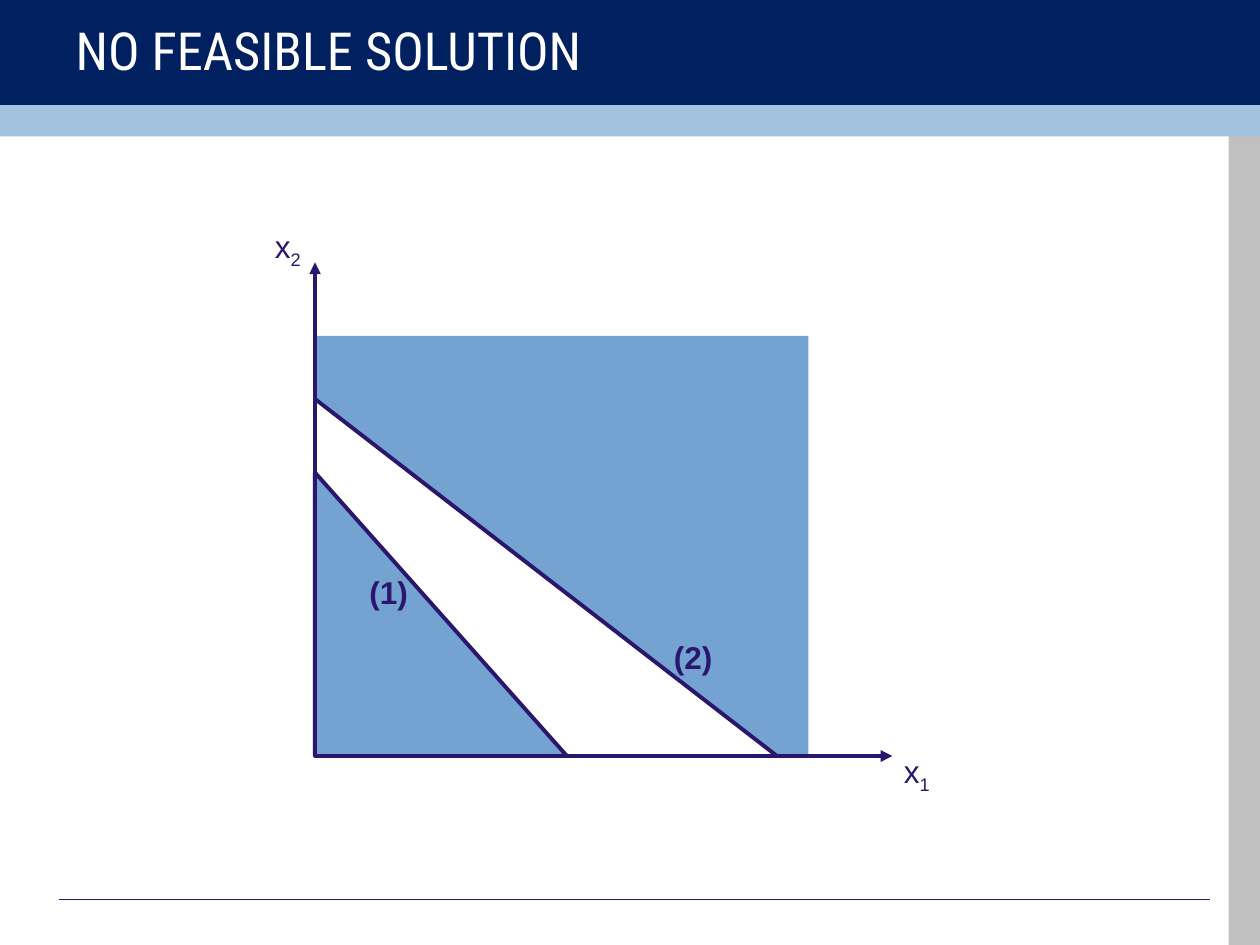
from dataclasses import dataclass

import lxml.etree
import pptx
import pptx.dml.color
import pptx.enum.shapes
import pptx.enum.text
import pptx.oxml.ns
import pptx.util

SHAPE = pptx.enum.shapes.MSO_SHAPE
COLS, ROWS = 120, 90  # slide grid, twelve units to the inch
INK, REGION, WHITE = "2B166E", "75A3D1", "FFFFFF"

prs = pptx.Presentation()
prs.slide_width = pptx.util.Inches(10)
prs.slide_height = pptx.util.Inches(7.5)
s = prs.slides.add_slide(prs.slide_layouts[5])


@dataclass
class Block:
    col: float
    row: float
    cols: float
    rows: float
    fill: str
    kind: int = SHAPE.RECTANGLE
    outlined: bool = False


@dataclass
class Line:
    start: tuple[float, float]
    end: tuple[float, float]
    width: float = 2.25
    arrow: bool = True


@dataclass
class Label:
    col: float
    row: float
    cols: float
    text: str
    sub: str = ""
    bold: bool = False


def x(col: float) -> int:
    return round(prs.slide_width * col / COLS)


def y(row: float) -> int:
    return round(prs.slide_height * row / ROWS)


def rgb(value: str) -> pptx.dml.color.RGBColor:
    return pptx.dml.color.RGBColor.from_string(value)


def set_all(target: object, values: dict) -> None:
    for name, value in values.items():
        setattr(target, name, value)


def set_line(line, width: float) -> None:
    line.color.rgb = rgb(INK)
    line.width = pptx.util.Pt(width)


def draw_block(b: Block) -> None:
    sp = s.shapes.add_shape(b.kind, x(b.col), y(b.row), x(b.cols), y(b.rows))
    sp.shadow.inherit = False
    sp.fill.solid()
    sp.fill.fore_color.rgb = rgb(b.fill)
    if b.outlined:
        set_line(sp.line, 2.25)
    else:
        sp.line.fill.background()


def draw_line(ln: Line) -> None:
    (x1, y1), (x2, y2) = ln.start, ln.end
    sp = s.shapes.add_connector(pptx.enum.shapes.MSO_CONNECTOR.STRAIGHT,
                                x(x1), y(y1), x(x2), y(y2))
    set_line(sp.line, ln.width)
    qn = pptx.oxml.ns.qn
    spPr = sp._element.spPr
    if ln.arrow:
        lxml.etree.SubElement(spPr.find(qn("a:ln")), qn("a:tailEnd"), type="triangle")
    lxml.etree.SubElement(spPr, qn("a:effectLst"))


def add_run(p, text: str, size: float, font: str, color: str, bold: bool = False):
    r = p.add_run()
    r.text = text
    set_all(r.font, {"size": pptx.util.Pt(size), "name": font, "bold": bold})
    r.font.color.rgb = rgb(color)
    return r


def draw_label(lb: Label) -> None:
    tf = s.shapes.add_textbox(x(lb.col), y(lb.row), x(lb.cols), y(4.8)).text_frame
    set_all(tf, {"word_wrap": False,
                 "auto_size": pptx.enum.text.MSO_AUTO_SIZE.SHAPE_TO_FIT_TEXT})
    p = tf.paragraphs[0]
    add_run(p, lb.text, 18, "Arial", INK, lb.bold)
    if lb.sub:
        r = add_run(p, lb.sub, 18, "Arial", INK)
        r.font._element.set("baseline", "-25000")


# Slide frame: side bar, footer rule, header bands
draw_block(Block(117, 12.9, 3, 77.1, "C0C0C0"))
draw_line(Line((5.6, 85.65), (115.2, 85.65), 0.75, False))
draw_block(Block(0, 0, COLS, 10, "002060"))
draw_block(Block(0, 10, COLS, 3, "A3C2E0"))

# Title, raised above the header band
title = s.shapes.title
set_all(title, {"left": x(6), "top": y(1), "width": x(81), "height": y(7.5)})
set_all(title.text_frame, {"vertical_anchor": pptx.enum.text.MSO_ANCHOR.MIDDLE,
                           "auto_size": pptx.enum.text.MSO_AUTO_SIZE.NONE,
                           "word_wrap": True})
p = title.text_frame.paragraphs[0]
p.alignment = pptx.enum.text.PP_ALIGN.LEFT
add_run(p, "NO FEASIBLE SOLUTION", 30, "Roboto Condensed", WHITE)
s.shapes._spTree.append(title._element)

# Graph: shaded area, axes, and one triangle under each constraint
LEFT, BASE = 30, 72
draw_block(Block(LEFT, 32, 47, BASE - 32, REGION))
draw_line(Line((LEFT, BASE), (85, BASE)))
for top, cols, fill in ((38, 44, WHITE), (45, 24, REGION)):
    draw_block(Block(LEFT, top, cols, BASE - top, fill, SHAPE.RIGHT_TRIANGLE, True))
draw_line(Line((LEFT, BASE), (LEFT, 25)))

# Axis and constraint labels
for label in (Label(84.9, 71, 5, "x", sub="1"),
              Label(25, 21, 5, "x", sub="2"),
              Label(34, 54, 6.1, "(1)", bold=True),
              Label(63, 60.2, 6.1, "(2)", bold=True)):
    draw_label(label)

prs.save("out.pptx")
